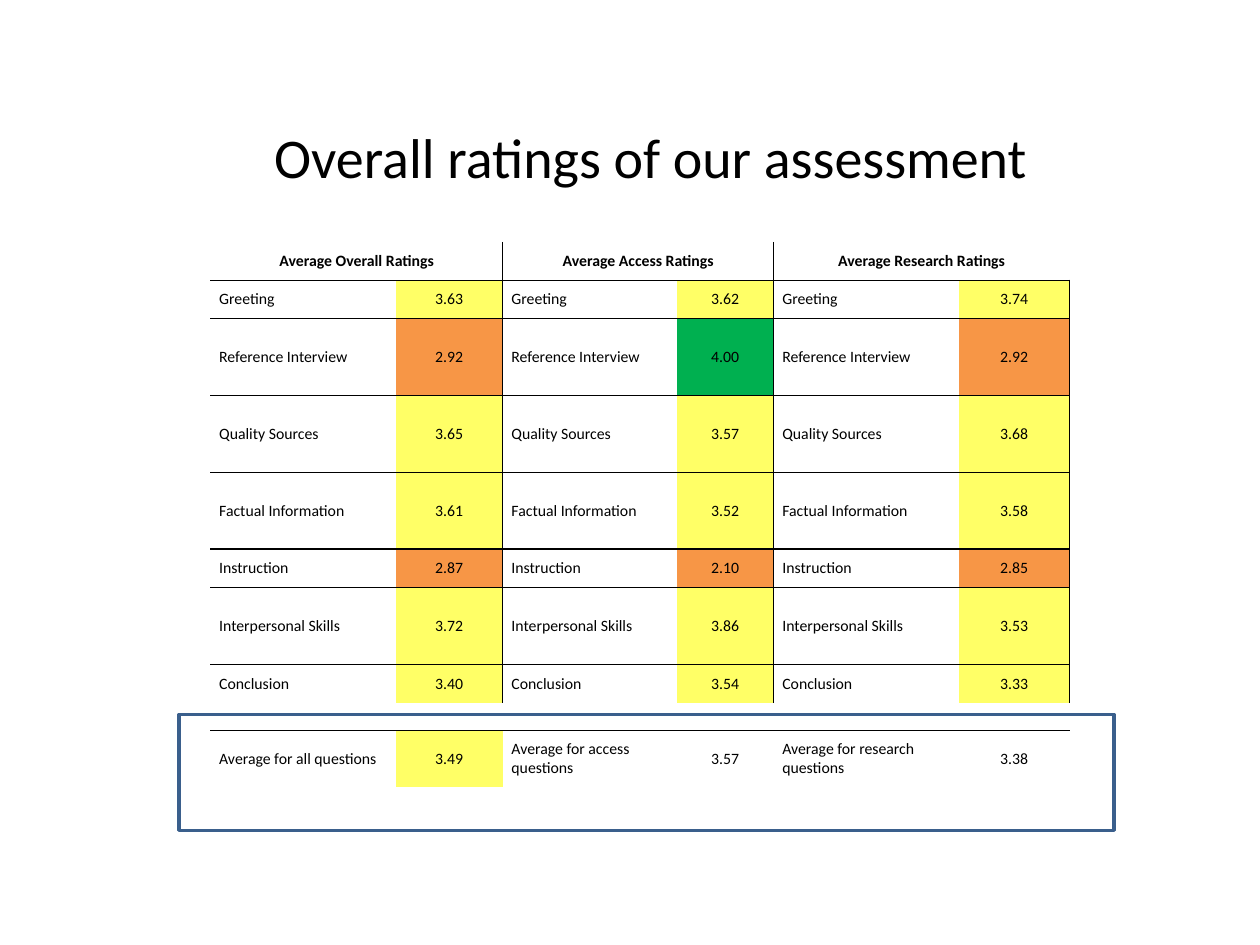
import lxml.etree
import pptx
import pptx.dml.color
import pptx.enum.shapes
import pptx.enum.text
import pptx.oxml.ns
import pptx.util

Inches = pptx.util.Inches
Pt = pptx.util.Pt
CENTER = pptx.enum.text.PP_ALIGN.CENTER
MIDDLE = pptx.enum.text.MSO_ANCHOR.MIDDLE

BLACK, YELLOW, ORANGE, GREEN, BLUE = "000000", "FFFF66", "F79646", "00B050", "3A5F8C"
COLUMN_WIDTHS = [1.47, 0.85, 1.38, 0.77, 1.47, 0.88]
HEADERS = ["Average Overall Ratings", "Average Access Ratings", "Average Research Ratings"]
RATINGS = [
    ("Greeting", 1, [3.63, 3.62, 3.74]),
    ("Reference Interview", 2, [2.92, 4.00, 2.92]),
    ("Quality Sources", 2, [3.65, 3.57, 3.68]),
    ("Factual Information", 2, [3.61, 3.52, 3.58]),
    ("Instruction", 1, [2.87, 2.10, 2.85]),
    ("Interpersonal Skills", 2, [3.72, 3.86, 3.53]),
    ("Conclusion", 1, [3.40, 3.54, 3.33]),
]
AVERAGES = [
    ("Average for all questions", 3.49),
    ("Average for access questions", 3.57),
    ("Average for research questions", 3.38),
]
SPACER = len(RATINGS) + 1
TOTAL = SPACER + 1


def rgb(value):
    """Return the colour for a hex string."""
    return pptx.dml.color.RGBColor.from_string(value)


def add_run(p, text, size, bold=False):
    """Add one black Calibri run to a paragraph."""
    r = p.add_run()
    r.text = text
    r.font.name = "Calibri"
    r.font.size = Pt(size)
    r.font.bold = bold
    r.font.color.rgb = rgb(BLACK)


def rating_color(value):
    """Return the fill that grades a rating."""
    if value >= 4:
        return GREEN
    return ORANGE if value < 3 else YELLOW


def set_borders(cell, sides):
    """Draw a thin black line on the given sides and none on the others."""
    qn = pptx.oxml.ns.qn
    tc_pr = cell._tc.get_or_add_tcPr()
    for side in "LRTB":
        ln = lxml.etree.SubElement(tc_pr, qn(f"a:ln{side}"), w=str(Pt(1)))
        if side in sides:
            fill = lxml.etree.SubElement(ln, qn("a:solidFill"))
            lxml.etree.SubElement(fill, qn("a:srgbClr"), val=BLACK)
        else:
            lxml.etree.SubElement(ln, qn("a:noFill"))


def cell_sides(row, col):
    """Return the sides of a grid position that carry a line."""
    ruled = [i for i in range(TOTAL) if i != SPACER - 1]
    sides = "B" if row in ruled else ""
    sides += "T" if row - 1 in ruled else ""
    if row < SPACER:
        sides += "R" if col % 2 else ""
        sides += "L" if col in (2, 4) else ""
    return sides


def format_cell(cell, row, col):
    """Give a cell its margins, borders and an empty fill."""
    cell.margin_left = cell.margin_right = Inches(0.07)
    cell.margin_top = cell.margin_bottom = 0
    cell.vertical_anchor = MIDDLE
    set_borders(cell, cell_sides(row, col))
    cell.fill.background()
    if row == SPACER:
        p = cell.text_frame.paragraphs[0]
        lxml.etree.SubElement(p._p, pptx.oxml.ns.qn("a:endParaRPr"), sz="900")


def write_cell(cell, text, centered=False, bold=False, color=None):
    """Write a cell's text and optional fill."""
    p = cell.text_frame.paragraphs[0]
    if centered:
        p.alignment = CENTER
    add_run(p, text, 9, bold)
    if color:
        cell.fill.solid()
        cell.fill.fore_color.rgb = rgb(color)


def add_ratings_table(s, left, top, width, height):
    """Add the three side-by-side rating lists with their averages."""
    frame = s.shapes.add_table(TOTAL + 1, len(COLUMN_WIDTHS), left, top, width, height)
    table = frame.table
    table.first_row = table.horz_banding = False
    for column, column_width in zip(table.columns, COLUMN_WIDTHS):
        column.width = Inches(column_width)
    units = [1] + [span for _, span, _ in RATINGS]
    spacer, total = Inches(0.22), Inches(0.45)
    unit = (height - spacer - total) / sum(units)
    for row, row_height in zip(table.rows, [int(unit * n) for n in units] + [spacer, total]):
        row.height = row_height
    for row in range(TOTAL + 1):
        for col in range(len(COLUMN_WIDTHS)):
            format_cell(table.cell(row, col), row, col)
    for group, header in enumerate(HEADERS):
        col = 2 * group
        table.cell(0, col).merge(table.cell(0, col + 1))
        write_cell(table.cell(0, col), header, centered=True, bold=True)
        for row, (label, _, values) in enumerate(RATINGS, 1):
            value = values[group]
            write_cell(table.cell(row, col), label)
            write_cell(table.cell(row, col + 1), f"{value:.2f}", True, color=rating_color(value))
        label, value = AVERAGES[group]
        write_cell(table.cell(TOTAL, col), label)
        color = rating_color(value) if group == 0 else None
        write_cell(table.cell(TOTAL, col + 1), f"{value:.2f}", True, color=color)


def add_title(s, left, top, width, height):
    """Add the centred slide title."""
    tf = s.shapes.add_textbox(left, top, width, height).text_frame
    tf.word_wrap = True
    p = tf.paragraphs[0]
    p.alignment = CENTER
    add_run(p, "Overall ratings of our assessment", 32)


def add_highlight(s, left, top, width, height):
    """Add the outline around the averages."""
    sp = s.shapes.add_shape(pptx.enum.shapes.MSO_SHAPE.RECTANGLE, left, top, width, height)
    sp.shadow.inherit = False
    sp.fill.background()
    sp.line.color.rgb = rgb(BLUE)
    sp.line.width = Pt(2)


def main():
    """Build and save the slide."""
    prs = pptx.Presentation()
    prs.slide_width, prs.slide_height = Inches(10), Inches(7.5)
    s = prs.slides.add_slide(prs.slide_layouts[6])
    add_ratings_table(s, Inches(1.67), Inches(1.92), Inches(6.83), Inches(4.33))
    add_title(s, Inches(1.58), Inches(0.92), Inches(7.17), Inches(0.64))
    add_highlight(s, Inches(1.42), Inches(5.67), Inches(7.42), Inches(0.92))
    prs.save("out.pptx")


if __name__ == "__main__":
    main()
